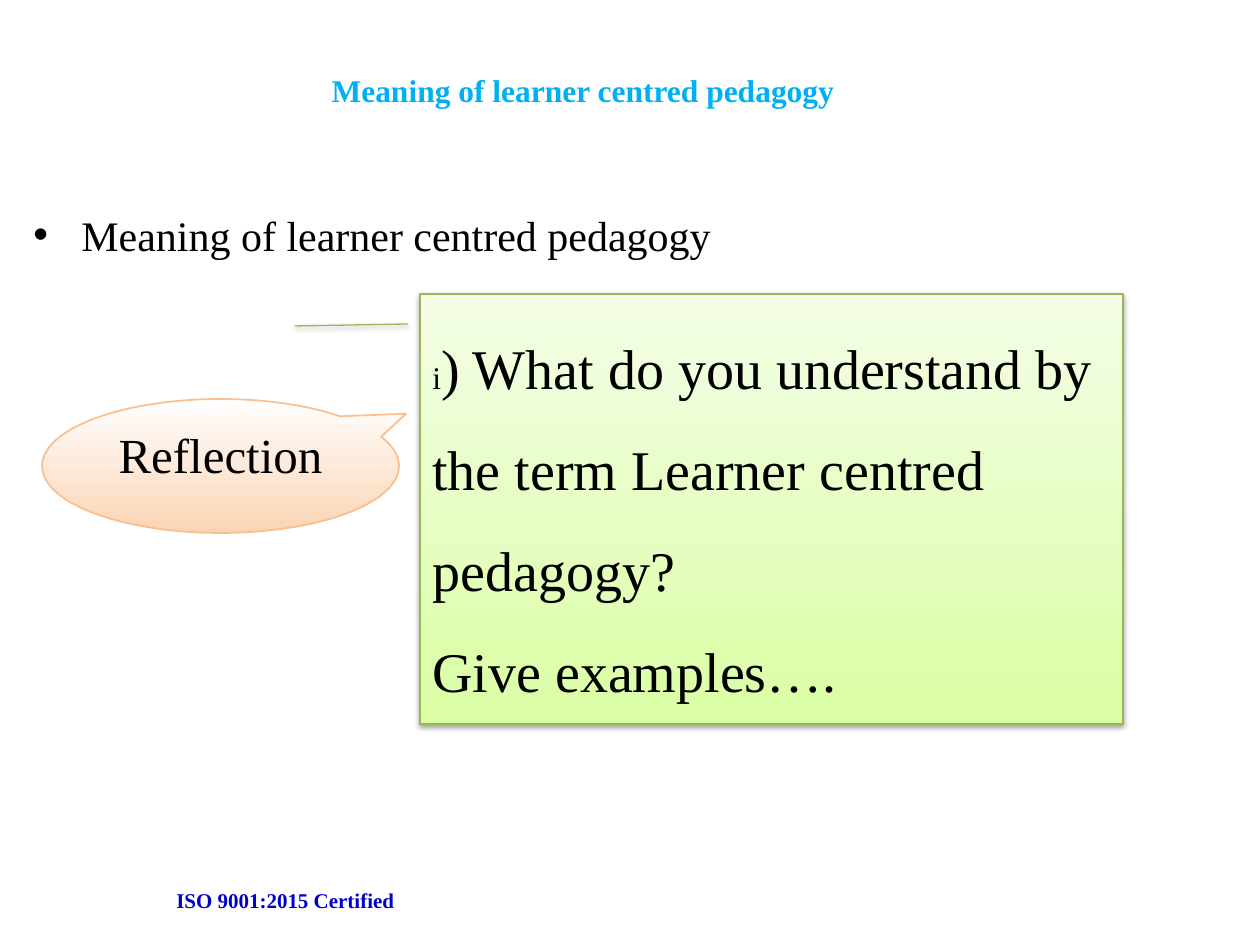
from lxml.etree import SubElement as Sub
from pptx import Presentation
from pptx.dml.color import RGBColor
from pptx.enum.shapes import MSO_CONNECTOR as Link, MSO_SHAPE as Shape
from pptx.enum.text import MSO_ANCHOR as Anchor, PP_ALIGN as Align
from pptx.oxml.ns import qn
from pptx.util import Pt

PX = 914400 // 126
FONT = "Times New Roman"
BLACK = RGBColor(0x00, 0x00, 0x00)
WHITE = RGBColor(0xFF, 0xFF, 0xFF)
SKY = RGBColor(0x00, 0xB0, 0xF0)
BLUE = RGBColor(0x00, 0x00, 0xCC)
PEACH = RGBColor(0xFB, 0xD4, 0xB4)
ORANGE = RGBColor(0xFA, 0xBF, 0x8F)
MIST = RGBColor(0xF4, 0xFE, 0xE6)
LIME = RGBColor(0xDA, 0xFE, 0xA4)
GREEN = RGBColor(0x97, 0xB8, 0x53)

# Each paragraph is a list of (text, points) runs.
FOOTER = [[("ISO 9001:2015 Certified", 12)]]
TITLE = [[("Meaning of learner centred pedagogy", 18)]]
BODY = [[("Meaning of learner centred pedagogy", 24)]]
REFLECT = [[("Reflection", 28)]]
QUESTION = [
    [("i", 18), (") What do you understand by the term Learner centred pedagogy?", 32)],
    [("Give examples….", 32)],
]


def emu(*sizes):
    return [size * PX for size in sizes]


def write(shape, paras, color=BLACK, bold=False, align=Align.LEFT,
          anchor=Anchor.TOP, space=1, bullet=0):
    """Fill a shape with text; bullet is the hanging indent in px."""
    frame = shape.text_frame
    frame.word_wrap = True
    frame.vertical_anchor = anchor
    for i, runs in enumerate(paras):
        para = frame.add_paragraph() if i else frame.paragraphs[0]
        para.alignment = align
        para.line_spacing = space
        if bullet:
            props = para._p.get_or_add_pPr()
            props.set("marL", str(bullet * PX))
            props.set("indent", str(-bullet * PX))
            Sub(props, qn("a:buFont"), typeface="Arial")
            Sub(props, qn("a:buChar"), char="•")
        for text, size in runs:
            run = para.add_run()
            run.text = text
            font = run.font
            font.name, font.size, font.bold = FONT, Pt(size), bold
            font.color.rgb = color


def add_text(slide, box, paras, **style):
    write(slide.shapes.add_textbox(*emu(*box)), paras, **style)


def add_block(slide, kind, box, top, base, edge, width):
    """Add a shape shaded from the top colour down to the base colour."""
    block = slide.shapes.add_shape(kind, *emu(*box))
    block.shadow.inherit = False
    block.fill.gradient()
    block.fill.gradient_angle = 270
    for stop, color in zip(block.fill.gradient_stops, (top, base)):
        stop.color.rgb = color
    block.line.color.rgb = edge
    block.line.width = Pt(width)
    return block


def drop_shadow(shape):
    props = shape._element.spPr
    effects = props.find(qn("a:effectLst"))
    if effects is None:
        effects = Sub(props, qn("a:effectLst"))
    outer = Sub(effects, qn("a:outerShdw"), blurRad="40000", dist="20000",
                dir="5400000", rotWithShape="0")
    color = Sub(outer, qn("a:srgbClr"), val=str(BLACK))
    Sub(color, qn("a:alpha"), val="36000")


def main():
    deck = Presentation()
    deck.slide_width, deck.slide_height = emu(1260, 945)
    slide = deck.slides.add_slide(deck.slide_layouts[6])

    add_text(slide, (164, 881, 654, 38), FOOTER, color=BLUE, bold=True)
    add_text(slide, (16, 11, 1134, 158), TITLE, color=SKY, bold=True,
             align=Align.CENTER, anchor=Anchor.MIDDLE)
    add_text(slide, (21, 203, 1134, 620), BODY, bullet=48)

    bubble = add_block(slide, Shape.OVAL_CALLOUT, (42, 399, 357, 134),
                       WHITE, PEACH, ORANGE, 1)
    bubble.adjustments[0], bubble.adjustments[1] = 0.52, -0.39
    write(bubble, REFLECT, align=Align.CENTER)

    panel = add_block(slide, Shape.RECTANGLE, (420, 294, 703, 430),
                      MIST, LIME, GREEN, 0.75)
    write(panel, QUESTION, space=1.5)

    line = slide.shapes.add_connector(Link.STRAIGHT, *emu(408, 324, 295, 326))
    line.line.color.rgb = GREEN
    line.line.width = Pt(0.75)
    for shape in (panel, line):
        drop_shadow(shape)

    deck.save("out.pptx")


if __name__ == "__main__":
    main()
